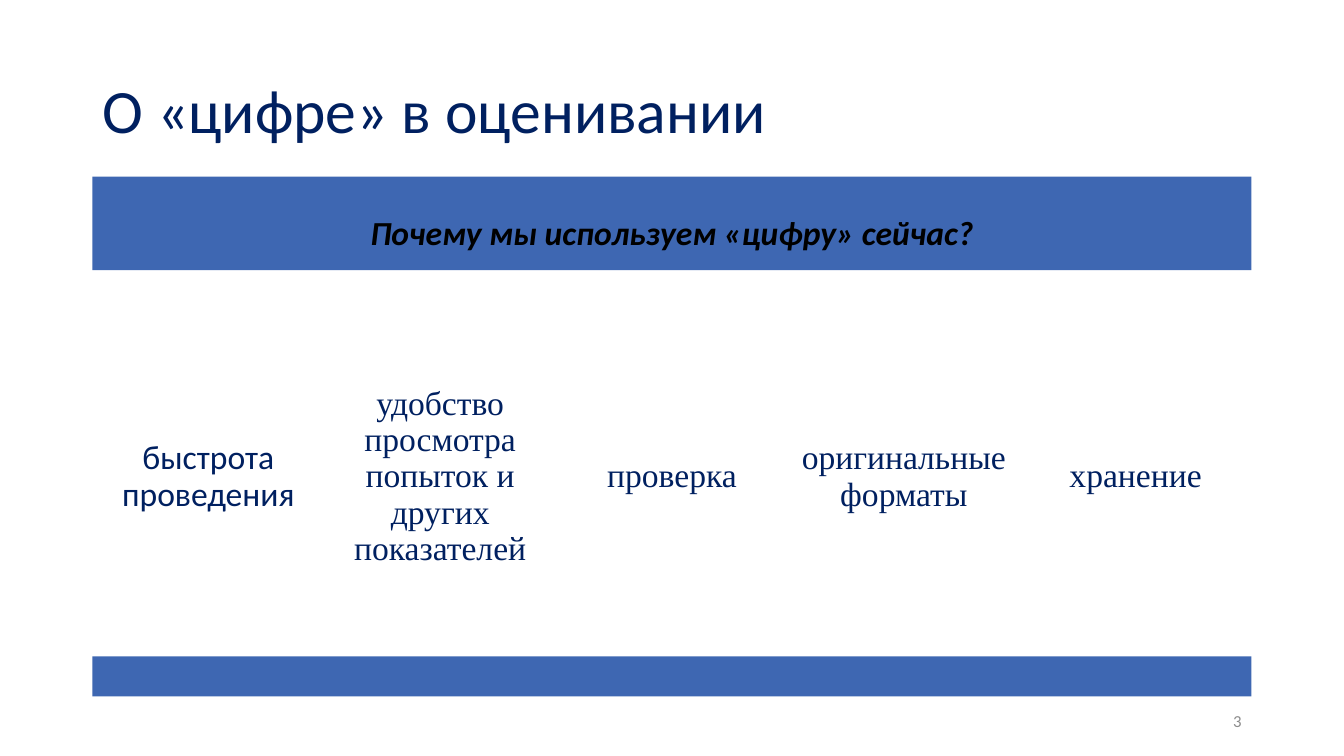
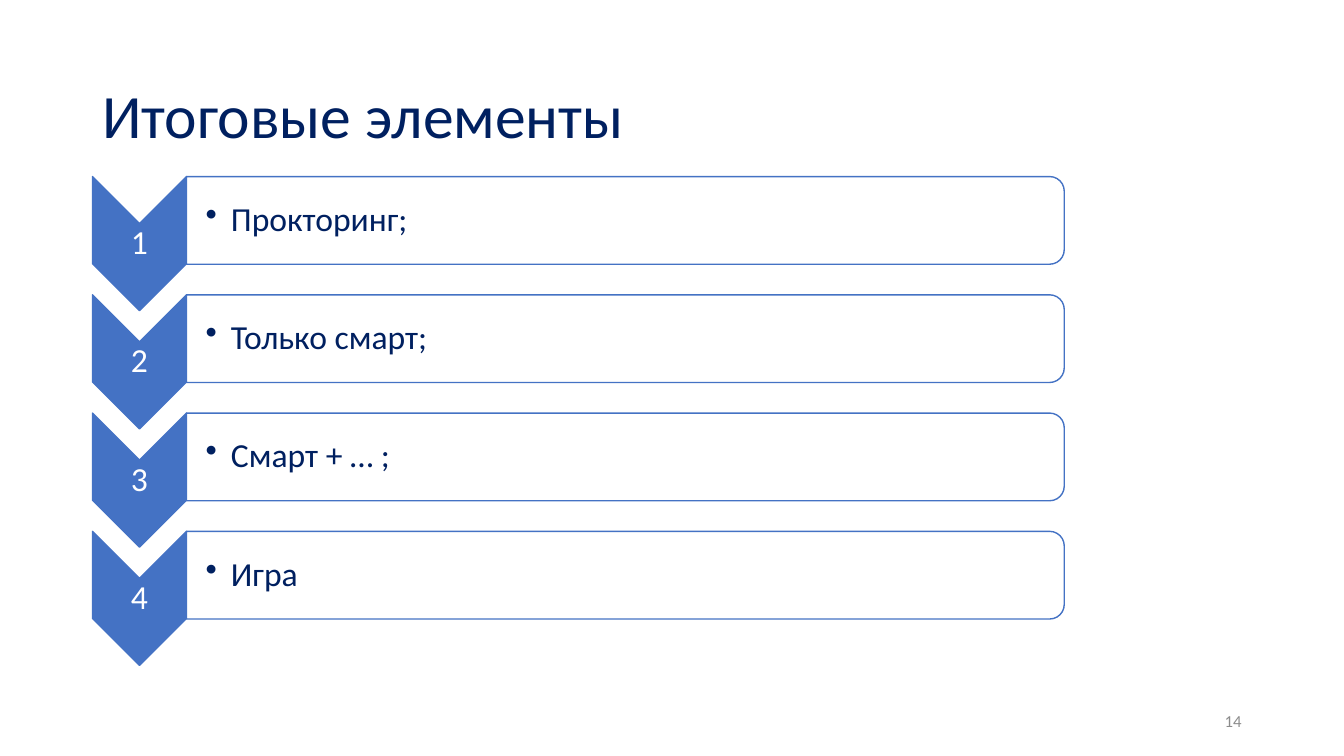
import pptx
import pptx.util
import pptx.dml.color
import pptx.enum.shapes
import pptx.enum.text
import pptx.oxml

Cm, Pt = pptx.util.Cm, pptx.util.Pt
KIND = pptx.enum.shapes.MSO_SHAPE
ALIGN = pptx.enum.text.PP_ALIGN
MIDDLE = pptx.enum.text.MSO_ANCHOR.MIDDLE

# Shared look
NAVY, BAND, BLUE = "002060", "3E67B2", "4472C4"
WHITE, BLACK, GREY = "FFFFFF", "000000", "8C8C8C"
SANS, SERIF = "Calibri", "Times New Roman"
LEFT, WIDTH = 2.33, 29.21
TOP = 4.45


def color(code):
    return pptx.dml.color.RGBColor.from_string(code)


def shape(slide, kind, x, y, w, h, fill, line=None, turn=0):
    """Place a shape by its visible box; turn is 0 or 90 degrees."""
    if turn == 90:
        x, y, w, h = x + (w - h) / 2, y + (h - w) / 2, h, w
    item = slide.shapes.add_shape(kind, Cm(x), Cm(y), Cm(w), Cm(h))
    item.rotation = turn
    item.shadow.inherit = False
    item.fill.solid()
    item.fill.fore_color.rgb = color(fill)
    if line:
        item.line.color.rgb = color(line)
        item.line.width = Pt(1)
    else:
        item.line.fill.background()
    return item


def box(slide, x, y, w, h):
    return slide.shapes.add_textbox(Cm(x), Cm(y), Cm(w), Cm(h))


def write(item, text, size=24, font=SANS, ink=NAVY, align=ALIGN.LEFT,
          bold=False, italic=False, inset=(0.25, 0.13, 0.25, 0.13),
          space=0.9, bullet=False):
    """Set the text of a shape; inset is left, top, right, bottom."""
    frame = item.text_frame
    frame.word_wrap = True
    frame.vertical_anchor = MIDDLE
    (frame.margin_left, frame.margin_top,
     frame.margin_right, frame.margin_bottom) = map(Cm, inset)
    para = frame.paragraphs[0]
    para.alignment = align
    para.line_spacing = space
    run = para.add_run()
    run.text = text
    face = run.font
    face.name, face.size = font, Pt(size)
    face.bold, face.italic = bold, italic
    face.color.rgb = color(ink)
    if bullet:
        props = para._p.get_or_add_pPr()
        props.set("marL", str(Cm(0.64)))
        props.set("indent", str(-Cm(0.64)))
        mark = pptx.oxml.parse_xml(
            '<a:buChar xmlns:a="http://schemas.openxmlformats.org/'
            'drawingml/2006/main" char="•"/>')
        props.append(mark)


def page(deck, title, number, top):
    """Add a slide with its title and page number."""
    slide = deck.slides.add_slide(deck.slide_layouts[6])
    write(box(slide, LEFT, top, WIDTH, 3.68), title, size=44)
    write(box(slide, LEFT + WIDTH - 7.62, 17.65, 7.62, 1.01), str(number),
          size=12, ink=GREY, align=ALIGN.RIGHT, space=1)
    return slide


def columns(slide, items, top, high):
    """Split the content width into equal text columns."""
    wide = WIDTH / len(items)
    for i, (text, font) in enumerate(items):
        cell = shape(slide, KIND.RECTANGLE, LEFT + i * wide, top, wide, high,
                     WHITE)
        write(cell, text, font=font, align=ALIGN.CENTER, inset=(0.25,) * 4)


def step(slide, number, text, top):
    """Draw a numbered chevron with its text bar."""
    wide = 2.37
    shape(slide, KIND.CHEVRON, LEFT, top, wide, 3.38, BLUE, BLUE, turn=90)
    write(box(slide, LEFT, top + wide / 2, wide, 1.01), str(number),
          ink=WHITE, align=ALIGN.CENTER, inset=(0.05,) * 4)
    bar = (LEFT + wide, top, 22.12, 2.21)
    shape(slide, KIND.ROUND_2_SAME_RECTANGLE, *bar, WHITE, BLUE, turn=90)
    write(box(slide, *bar), text, bullet=True, inset=(0.48, 0.05, 0.05, 0.05))


def reasons(deck):
    slide = page(deck, "О «цифре» в оценивании", 3, 1.02)
    # Heading band
    head = shape(slide, KIND.RECTANGLE, LEFT, TOP, WIDTH, 2.36, BAND)
    write(head, "Почему мы используем «цифру» сейчас?", ink=BLACK, bold=True,
          italic=True, align=ALIGN.CENTER, inset=(0.25, 0.79, 0.25, 0.25))
    # Reasons and closing band
    columns(slide, [
        ("быстрота проведения", SANS),
        ("удобство просмотра попыток и других показателей", SERIF),
        ("проверка", SERIF),
        ("оригинальные форматы", SERIF),
        ("хранение", SERIF),
    ], 7.49, 9.06)
    shape(slide, KIND.RECTANGLE, LEFT, 16.54, WIDTH, 1.01, BAND)


def finals(deck):
    slide = page(deck, "Итоговые элементы", 14, 1.14)
    items = ["Прокторинг;", "Только смарт;", "Смарт + … ;", "Игра"]
    for i, text in enumerate(items):
        step(slide, i + 1, text, TOP + i * 2.98)


def main():
    deck = pptx.Presentation()
    deck.slide_width, deck.slide_height = Cm(33.87), Cm(19.05)
    reasons(deck)
    finals(deck)
    deck.save("out.pptx")


if __name__ == "__main__":
    main()
